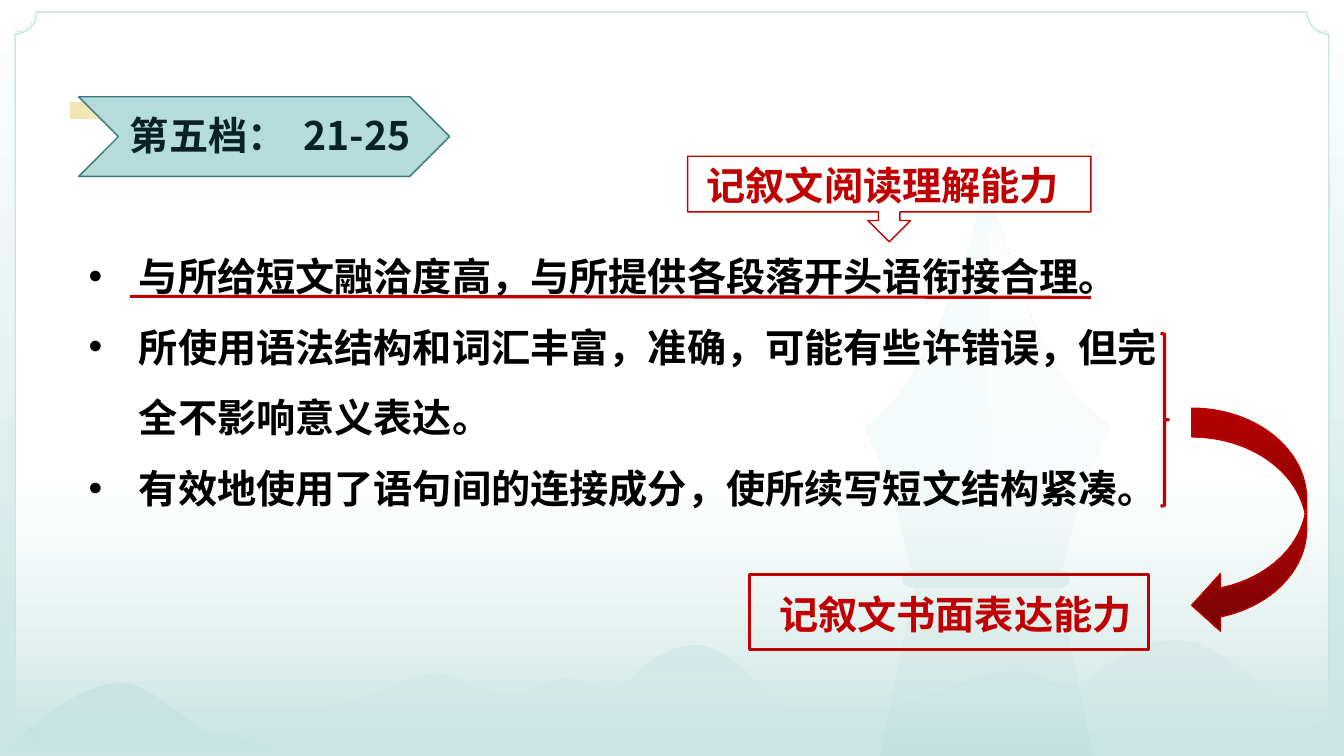
from lxml import etree
from pptx import Presentation
from pptx.dml.color import RGBColor
from pptx.enum.shapes import MSO_CONNECTOR, MSO_SHAPE
from pptx.enum.text import MSO_AUTO_SIZE
from pptx.oxml.ns import qn
from pptx.util import Inches, Pt

WHITE = RGBColor(0xFF, 0xFF, 0xFF)
BLACK = RGBColor(0x00, 0x00, 0x00)
INK = RGBColor(0x0A, 0x21, 0x24)
RED = RGBColor(0xC0, 0x00, 0x00)
BRIGHT_RED = RGBColor(0xE3, 0x00, 0x00)
DARK_RED = RGBColor(0x76, 0x03, 0x03)
PALE_TEAL = RGBColor(0xC8, 0xE5, 0xE2)
LIGHT_TEAL = RGBColor(0xB5, 0xDC, 0xDB)
TEAL = RGBColor(0x4C, 0xA1, 0x9F)
DEEP_TEAL = RGBColor(0x38, 0x77, 0x76)
GOLD = RGBColor(0xE6, 0xCC, 0x60)
SC_FONT = "Noto Sans CJK SC"
JP_FONT = "Noto Sans CJK JP"


def paint(shape, stops=(), angle=90, line=None, width=1):
    """Fill with (position, colour, opacity) stops; one stop is a solid fill."""
    shape.shadow.inherit = False
    shape.fill.background()
    if line is None:
        shape.line.fill.background()
    else:
        shape.line.color.rgb = line
        shape.line.width = Pt(width)
    if not stops:
        return
    no_fill = shape._element.spPr.find(qn("a:noFill"))
    fill = etree.Element(qn("a:gradFill" if len(stops) > 1 else "a:solidFill"))
    holder = etree.SubElement(fill, qn("a:gsLst")) if len(stops) > 1 else fill
    for position, color, opacity in stops:
        parent = holder
        if len(stops) > 1:
            parent = etree.SubElement(holder, qn("a:gs"), pos=str(position * 1000))
        tint = etree.SubElement(parent, qn("a:srgbClr"), val=str(color))
        if opacity < 100:
            etree.SubElement(tint, qn("a:alpha"), val=str(opacity * 1000))
    if len(stops) > 1:
        etree.SubElement(fill, qn("a:lin"), ang=str(angle * 60000), scaled="0")
    no_fill.getparent().replace(no_fill, fill)


def add_text(text, left, top, width, height, font=SC_FONT, color=RED,
             size=28, spacing=None, bullet=None, space_extra=0):
    """Add bold text, one paragraph a line; space_extra widens the first space, in points."""
    frame = slide.shapes.add_textbox(
        Inches(left), Inches(top), Inches(width), Inches(height)).text_frame
    frame.word_wrap = True
    frame.auto_size = MSO_AUTO_SIZE.SHAPE_TO_FIT_TEXT
    for index, line in enumerate(text.split("\n")):
        paragraph = frame.add_paragraph() if index else frame.paragraphs[0]
        paragraph.line_spacing = spacing
        if bullet:
            properties = paragraph._p.get_or_add_pPr()
            properties.set("marL", str(Inches(0.5)))
            properties.set("indent", str(-Inches(0.5)))
            etree.SubElement(properties, qn("a:buFont"), typeface="Arial")
            etree.SubElement(properties, qn("a:buChar"), char=bullet)
        for piece in filter(None, line.partition(" ")):
            run = paragraph.add_run()
            run.text = piece
            run.font.size = Pt(size)
            run.font.bold = True
            run.font.color.rgb = color
            run.font.name = font
            run_properties = run._r.get_or_add_rPr()
            etree.SubElement(run_properties, qn("a:ea"), typeface=font)
            if piece == " " and space_extra:
                run_properties.set("spc", str(space_extra * 100))


presentation = Presentation()
presentation.slide_width = Inches(13.33)
presentation.slide_height = Inches(7.5)
slide = presentation.slides.add_slide(presentation.slide_layouts[6])

# Backdrop, frame and gold accent
backdrop = slide.shapes.add_shape(
    MSO_SHAPE.RECTANGLE, 0, 0, Inches(13.33), Inches(7.5))
paint(backdrop, [(0, WHITE, 100), (97, PALE_TEAL, 100)])
frame_panel = slide.shapes.add_shape(
    MSO_SHAPE.PLAQUE, Inches(0.15), Inches(0.12), Inches(13.03), Inches(7.25))
frame_panel.adjustments[0] = 0.03
paint(frame_panel, [(64, WHITE, 100), (100, WHITE, 0)], line=PALE_TEAL)
accent = slide.shapes.add_shape(
    MSO_SHAPE.RECTANGLE, Inches(0.7), Inches(1.02), Inches(2), Inches(0.16))
paint(accent, [(0, GOLD, 0), (100, GOLD, 50)], angle=180)

# Hills: base corners, then cubic curves running back along the ridge
hills = [
    (LIGHT_TEAL, 20, (8.58, 7.02), (12.76, 7.02), [
        ((12.76, 7.02), (12.12, 6.35), (11.68, 6.34)),
        ((11.23, 6.33), (10.89, 6.65), (10.76, 6.75)),
        ((10.68, 6.81), (10.63, 6.86), (10.39, 6.73)),
        ((10.16, 6.6), (9.87, 6.61), (9.37, 6.83)),
        ((8.97, 6.99), (8.58, 7.02), (8.58, 7.02))]),
    (LIGHT_TEAL, 30, (3.19, 7.02), (7.74, 7.02), [
        ((7.74, 7.02), (7.25, 6.4), (6.91, 6.39)),
        ((6.57, 6.38), (6.31, 6.67), (6.2, 6.77)),
        ((6.14, 6.82), (6.11, 6.87), (5.77, 6.75)),
        ((5.58, 6.68), (5.39, 6.75), (5.26, 6.84)),
        ((5.15, 6.91), (4.77, 6.87), (4.59, 6.75)),
        ((4.4, 6.63), (4.18, 6.64), (3.79, 6.84)),
        ((3.49, 6.99), (3.19, 7.01), (3.19, 7.01))]),
    (TEAL, 10, (0, 7.5), (2.98, 7.5), [
        ((2.98, 7.5), (2.64, 7.43), (2.52, 7.38)),
        ((2.4, 7.32), (2.25, 7.24), (2.08, 7.26)),
        ((1.94, 7.28), (1.55, 6.78), (1.18, 6.77)),
        ((0.8, 6.77), (0.27, 7.21), (0, 7.5))]),
]
CURVE_STEPS = 12
outlines = []
for color, opacity, left_corner, right_corner, curves in hills:
    points = [left_corner, right_corner]
    for first, second, end in curves:
        begin = points[-1]
        for step in range(1, CURVE_STEPS + 1):
            t = step / CURVE_STEPS
            u = 1 - t
            points.append(tuple(
                u**3 * a + 3 * u * u * t * b + 3 * u * t * t * c + t**3 * d
                for a, b, c, d in zip(begin, first, second, end)))
    outlines.append((points, [(0, color, opacity), (100, color, 0)]))

# Pen nib: whole nib, then a lighter right half
nib_right = [
    (9.86, 2.07), (9.93, 2.28), (10.02, 2.59), (10.23, 3.16), (10.45, 3.6),
    (10.58, 3.81), (10.74, 4), (10.86, 4.12), (10.99, 4.22), (11, 4.25),
    (10.85, 4.59), (10.73, 4.92), (10.63, 5.26), (10.54, 5.64), (10.52, 5.66)]
nib_left = [
    (9.07, 5.66), (9.03, 5.63), (8.96, 5.34), (8.86, 4.96), (8.73, 4.6),
    (8.6, 4.3), (8.58, 4.24), (8.63, 4.2), (8.82, 4.03), (8.98, 3.82),
    (9.24, 3.38), (9.4, 3.01), (9.56, 2.58), (9.67, 2.22), (9.71, 2.04),
    (9.67, 1.95), (9.71, 1.86), (9.79, 1.83), (9.87, 1.86), (9.91, 1.95)]
outlines.append((nib_right + nib_left, [(0, TEAL, 5)]))
outlines.append(([(9.81, 2.05)] + nib_right + [(9.81, 5.66)],
                 [(0, WHITE, 0), (14, WHITE, 100), (97, WHITE, 0)]))
for points, stops in outlines:
    (start_x, start_y), *rest = [(Inches(x), Inches(y)) for x, y in points]
    builder = slide.shapes.build_freeform(start_x, start_y)
    builder.add_line_segments(rest, close=True)
    paint(builder.convert_to_shape(), stops)

pen_body = slide.shapes.add_shape(
    MSO_SHAPE.TRAPEZOID, Inches(8.73), Inches(5.82), Inches(2.11), Inches(1.68))
pen_body.adjustments[0] = 0.2
paint(pen_body, [(0, TEAL, 4)])
pen_collar = slide.shapes.add_shape(
    MSO_SHAPE.ROUNDED_RECTANGLE, Inches(8.95), Inches(5.66), Inches(1.66), Inches(0.17))
pen_collar.adjustments[0] = 0.5
paint(pen_collar, [(0, TEAL, 10)])

# Band heading
chevron = slide.shapes.add_shape(
    MSO_SHAPE.CHEVRON, Inches(0.78), Inches(0.96), Inches(3.68), Inches(0.79))
paint(chevron, [(0, LIGHT_TEAL, 100)], line=DEEP_TEAL)
add_text("第五档： 21-25", 1.19, 1.06, 3.64, 0.6, color=INK, space_extra=6)

# Scoring criteria
add_text("与所给短文融洽度高，与所提供各段落开头语衔接合理。\n"
         "所使用语法结构和词汇丰富，准确，可能有些许错误，但完全不影响意义表达。\n"
         "有效地使用了语句间的连接成分，使所续写短文结构紧凑。",
         0.78, 2.22, 11.14, 2.93, color=BLACK, spacing=1.5, bullet="•")
underline = slide.shapes.add_connector(
    MSO_CONNECTOR.STRAIGHT, Inches(1.29), Inches(2.94), Inches(10.82), Inches(2.95))
underline.line.color.rgb = RED
underline.line.width = Pt(2.25)
etree.SubElement(underline._element.spPr, qn("a:effectLst"))

# Red callouts
add_text("记叙文阅读理解能力", 6.91, 1.55, 3.83, 0.6, font=JP_FONT)
callouts = [
    (MSO_SHAPE.DOWN_ARROW_CALLOUT, 6.82, 1.55, 4, 0.85, 1, ()),
    (MSO_SHAPE.RIGHT_BRACE, 11.51, 3.31, 0.08, 1.71, 2.25, ()),
    (MSO_SHAPE.CURVED_LEFT_ARROW, 11.82, 4.05, 1.14, 2.24, 1,
     [(0, BRIGHT_RED, 100), (100, DARK_RED, 100)]),
    (MSO_SHAPE.RECTANGLE, 7.43, 5.7, 3.96, 0.74, 2.25, ()),
]
for kind, left, top, width, height, line_width, stops in callouts:
    callout = slide.shapes.add_shape(
        kind, Inches(left), Inches(top), Inches(width), Inches(height))
    paint(callout, stops, line=RED, width=line_width)
add_text("记叙文书面表达能力", 7.63, 5.81, 3.96, 0.6, font=JP_FONT)

presentation.save("out.pptx")
